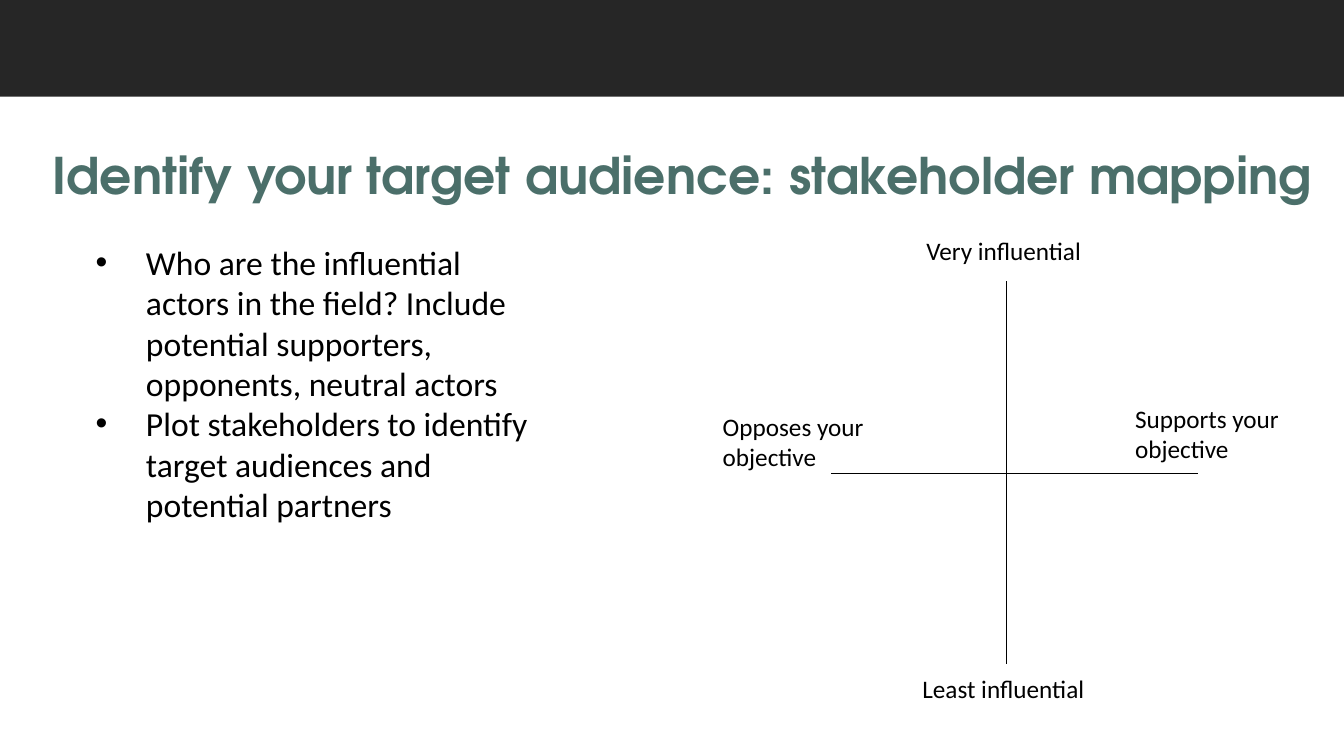
from dataclasses import dataclass

from lxml import etree
from pptx import Presentation
from pptx.dml.color import RGBColor
from pptx.enum import shapes, text
from pptx.oxml import ns
from pptx.util import Inches, Pt

TITLE = "Identify your target audience: stakeholder mapping"
QUESTIONS = [
    "Who are the influential actors in the field? Include potential supporters, opponents, neutral actors",
    "Plot stakeholders to identify target audiences and potential partners",
]
AXIS_LABELS = [
    ("Supports your objective", (11.16, 3.95, 1.74, 0.71)),
    ("Opposes your objective", (7.07, 4.03, 1.74, 0.71)),
    ("Very influential", (9.09, 2.29, 1.74, 0.4)),
    ("Least influential", (9.05, 6.63, 1.88, 0.4)),
]
AXES = [
    (9.98, 2.79, 9.98, 6.59),
    (11.88, 4.7, 8.24, 4.7),
]


@dataclass(frozen=True)
class Theme:
    band: RGBColor = RGBColor.from_string("262626")
    heading: RGBColor = RGBColor.from_string("4B6F6A")
    ink: RGBColor = RGBColor.from_string("000000")
    heading_font: str = "TeX Gyre Adventor"
    body_font: str = "Calibri"
    heading_size: int = 36
    body_size: int = 24
    label_size: int = 18
    axis_width: float = 0.5


THEME = Theme()


def inches(values):
    return [Inches(value) for value in values]


def style(paragraph, face, size, color, bold=False):
    font = paragraph.font
    font.name = face
    font.size = Pt(size)
    font.color.rgb = color
    font.bold = bold


def add_bullet(paragraph, indent):
    properties = paragraph._p.get_or_add_pPr()
    properties.set("marL", str(Inches(indent)))
    properties.set("indent", str(-Inches(indent)))
    etree.SubElement(properties, ns.qn("a:buFont")).set("typeface", "Arial")
    etree.SubElement(properties, ns.qn("a:buChar")).set("char", "•")


def add_text(slide, place, lines, size, bullet_indent=None):
    frame = slide.shapes.add_textbox(*inches(place)).text_frame
    frame.word_wrap = True
    frame.text = "\n".join(lines)
    for paragraph in frame.paragraphs:
        if bullet_indent:
            add_bullet(paragraph, bullet_indent)
        style(paragraph, THEME.body_font, size, THEME.ink)


def add_band(slide, width):
    band = slide.shapes.add_shape(
        shapes.MSO_SHAPE.RECTANGLE, 0, 0, width, Inches(0.96))
    band.shadow.inherit = False
    band.fill.solid()
    band.fill.fore_color.rgb = THEME.band
    band.line.fill.background()
    slide.shapes._spTree.insert(2, band._element)


def add_title(slide):
    title = slide.shapes.title
    title.left, title.top, title.width, title.height = inches((0.42, 0.58, 13.08, 2.37))
    frame = title.text_frame
    frame.text = TITLE
    frame.word_wrap = True
    frame.auto_size = text.MSO_AUTO_SIZE.NONE
    frame.vertical_anchor = text.MSO_ANCHOR.MIDDLE
    heading = frame.paragraphs[0]
    heading.alignment = text.PP_ALIGN.LEFT
    heading.line_spacing = 0.9
    style(heading, THEME.heading_font, THEME.heading_size, THEME.heading, bold=True)


def add_axis(slide, ends):
    axis = slide.shapes.add_connector(shapes.MSO_CONNECTOR.STRAIGHT, *inches(ends))
    axis.line.color.rgb = THEME.ink
    axis.line.width = Pt(THEME.axis_width)
    etree.SubElement(axis._element.spPr, ns.qn("a:effectLst"))


def main():
    deck = Presentation()
    deck.slide_width, deck.slide_height = inches((13.33, 7.5))
    slide = deck.slides.add_slide(deck.slide_layouts[5])
    add_band(slide, deck.slide_width)
    add_title(slide)
    add_text(slide, (0.85, 2.35, 4.56, 3.33), QUESTIONS, THEME.body_size, bullet_indent=0.5)
    for ends in AXES:
        add_axis(slide, ends)
    for label, place in AXIS_LABELS:
        add_text(slide, place, [label], THEME.label_size)
    deck.save("out.pptx")


if __name__ == "__main__":
    main()
